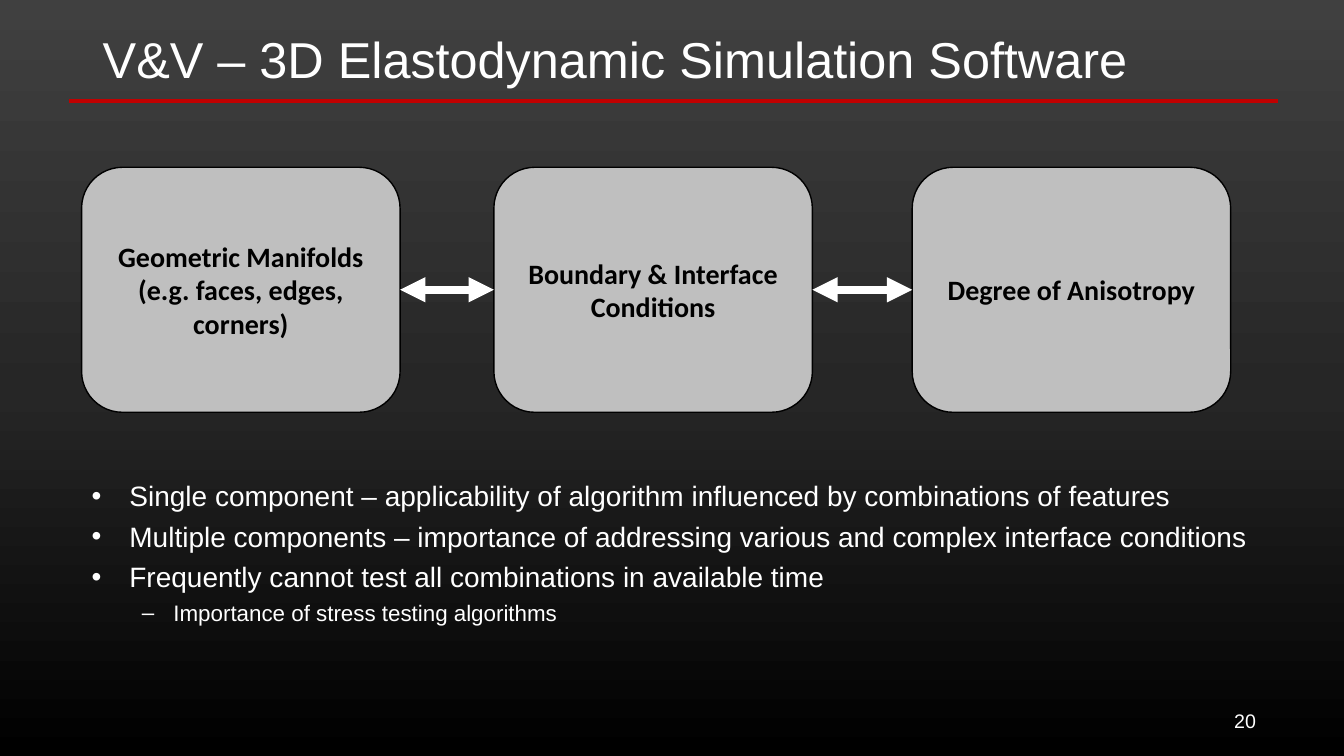
from copy import deepcopy
from dataclasses import dataclass
from itertools import pairwise

from lxml.etree import SubElement
from pptx import Presentation
from pptx.dml.color import RGBColor
from pptx.enum.shapes import MSO_CONNECTOR, MSO_SHAPE
from pptx.enum.text import MSO_ANCHOR, MSO_AUTO_SIZE, PP_ALIGN
from pptx.oxml.ns import qn
from pptx.shapes.autoshape import Shape
from pptx.shapes.connector import Connector
from pptx.slide import Slide
from pptx.util import Pt

WHITE = "FFFFFF"
BLACK = "000000"
GRAY = "BFBFBF"
RED = "C00000"
BACKGROUND_STOPS = [(0, "000000"), (48, "262626"), (100, "404040")]

TOPIC_TOP, TOPIC_WIDTH, TOPIC_HEIGHT = 119.5, 227.5, 175
LEFT_SIDE, RIGHT_SIDE = 1, 3


@dataclass
class Topic:
    text: str
    left: float


@dataclass
class Bullet:
    text: str
    level: int = 0


@dataclass
class BulletStyle:
    symbol: str
    size: float
    margin: float
    hanging: float
    space_before: float


TOPICS = [
    Topic("Geometric Manifolds (e.g. faces, edges, corners)", 58.3),
    Topic("Boundary & Interface Conditions", 352.8),
    Topic("Degree of Anisotropy", 651.6),
]

BULLETS = [
    Bullet("Single component – applicability of algorithm influenced by combinations of features"),
    Bullet("Multiple components – importance of addressing various and complex interface conditions"),
    Bullet("Frequently cannot test all combinations in available time"),
    Bullet("Importance of stress testing algorithms", 1),
]

BULLET_STYLES = [
    BulletStyle("•", 20, 27, 27, 5),
    BulletStyle("–", 16, 58.5, 22.5, 4),
]


def color(value: str) -> RGBColor:
    return RGBColor.from_string(value)


def add_span(para, text: str, size: float, font: str = "Arial",
             ink: str = WHITE, bold: bool = False) -> None:
    span = para.add_run()
    span.text = text
    span.font.name = font
    span.font.size = Pt(size)
    span.font.bold = bold
    span.font.color.rgb = color(ink)


def paint_background(page: Slide) -> None:
    fill = page.background.fill
    fill.gradient()
    fill.gradient_angle = 90
    stops = page.element.find(".//" + qn("a:gsLst"))
    stops.insert(1, deepcopy(stops[0]))
    for stop, (position, value) in zip(fill.gradient_stops, BACKGROUND_STOPS):
        stop.position = position / 100
        stop.color.rgb = color(value)


def add_title(page: Slide, text: str) -> None:
    title = page.shapes.title
    title.left, title.top, title.width, title.height = Pt(66.2), Pt(22.3), Pt(828), Pt(44)
    frame = title.text_frame
    frame.auto_size = MSO_AUTO_SIZE.NONE
    frame.vertical_anchor = MSO_ANCHOR.MIDDLE
    para = frame.paragraphs[0]
    para.alignment = PP_ALIGN.LEFT
    para.line_spacing = 0.9
    add_span(para, text, 36)


def add_line(page: Slide, start: tuple[float, float], end: tuple[float, float],
             ink: str, width: float) -> Connector:
    line = page.shapes.add_connector(
        MSO_CONNECTOR.STRAIGHT, *(Pt(length) for length in (*start, *end)))
    line.line.color.rgb = color(ink)
    line.line.width = Pt(width)
    SubElement(line.element.spPr, qn("a:effectLst"))
    return line


def add_topic(page: Slide, topic: Topic) -> Shape:
    box = page.shapes.add_shape(MSO_SHAPE.ROUNDED_RECTANGLE, Pt(topic.left), Pt(TOPIC_TOP),
                                Pt(TOPIC_WIDTH), Pt(TOPIC_HEIGHT))
    box.shadow.inherit = False
    box.fill.solid()
    box.fill.fore_color.rgb = color(GRAY)
    box.line.color.rgb = color(BLACK)
    box.line.width = Pt(1)
    frame = box.text_frame
    frame.word_wrap = True
    frame.vertical_anchor = MSO_ANCHOR.MIDDLE
    para = frame.paragraphs[0]
    para.alignment = PP_ALIGN.CENTER
    add_span(para, topic.text, 20, "Calibri", BLACK, True)
    return box


def join_topics(page: Slide, first: Shape, second: Shape) -> None:
    middle = TOPIC_TOP + TOPIC_HEIGHT / 2
    arrow = add_line(page, ((first.left + first.width).pt if hasattr(first.left + first.width, "pt")
                            else (first.left + first.width) / Pt(1), middle),
                     (second.left.pt, middle), WHITE, 6)
    arrow.begin_connect(first, RIGHT_SIDE)
    arrow.end_connect(second, LEFT_SIDE)
    outline = arrow.element.spPr.find(qn("a:ln"))
    for end in ("a:headEnd", "a:tailEnd"):
        SubElement(outline, qn(end), type="triangle")


def add_bullets(page: Slide) -> None:
    box = page.shapes.add_textbox(Pt(58.3), Pt(338.4), Pt(846), Pt(139.7))
    frame = box.text_frame
    frame.word_wrap = True
    for index, bullet in enumerate(BULLETS):
        style = BULLET_STYLES[bullet.level]
        para = frame.add_paragraph() if index else frame.paragraphs[0]
        para.level = bullet.level
        if index:
            para.space_before = Pt(style.space_before)
        properties = para._p.get_or_add_pPr()
        properties.set("marL", str(Pt(style.margin)))
        properties.set("indent", str(-Pt(style.hanging)))
        SubElement(properties, qn("a:buFont"), typeface="Arial")
        SubElement(properties, qn("a:buChar"), char=style.symbol)
        add_span(para, bullet.text, style.size)


def add_page_number(page: Slide, number: str) -> None:
    box = page.shapes.add_textbox(Pt(866.9), Pt(500.4), Pt(37.4), Pt(28.8))
    frame = box.text_frame
    frame.word_wrap = True
    frame.vertical_anchor = MSO_ANCHOR.MIDDLE
    para = frame.paragraphs[0]
    para.alignment = PP_ALIGN.RIGHT
    add_span(para, number, 14)


def main() -> None:
    deck = Presentation()
    deck.slide_width, deck.slide_height = Pt(960), Pt(540)
    page = deck.slides.add_slide(deck.slide_layouts.get_by_name("Title Only"))
    paint_background(page)
    add_line(page, (49, 72), (913, 72), RED, 3)
    add_page_number(page, "20")
    add_title(page, "V&V – 3D Elastodynamic Simulation Software")
    boxes = [add_topic(page, topic) for topic in TOPICS]
    add_bullets(page)
    for first, second in pairwise(boxes):
        join_topics(page, first, second)
    deck.save("out.pptx")


if __name__ == "__main__":
    main()
